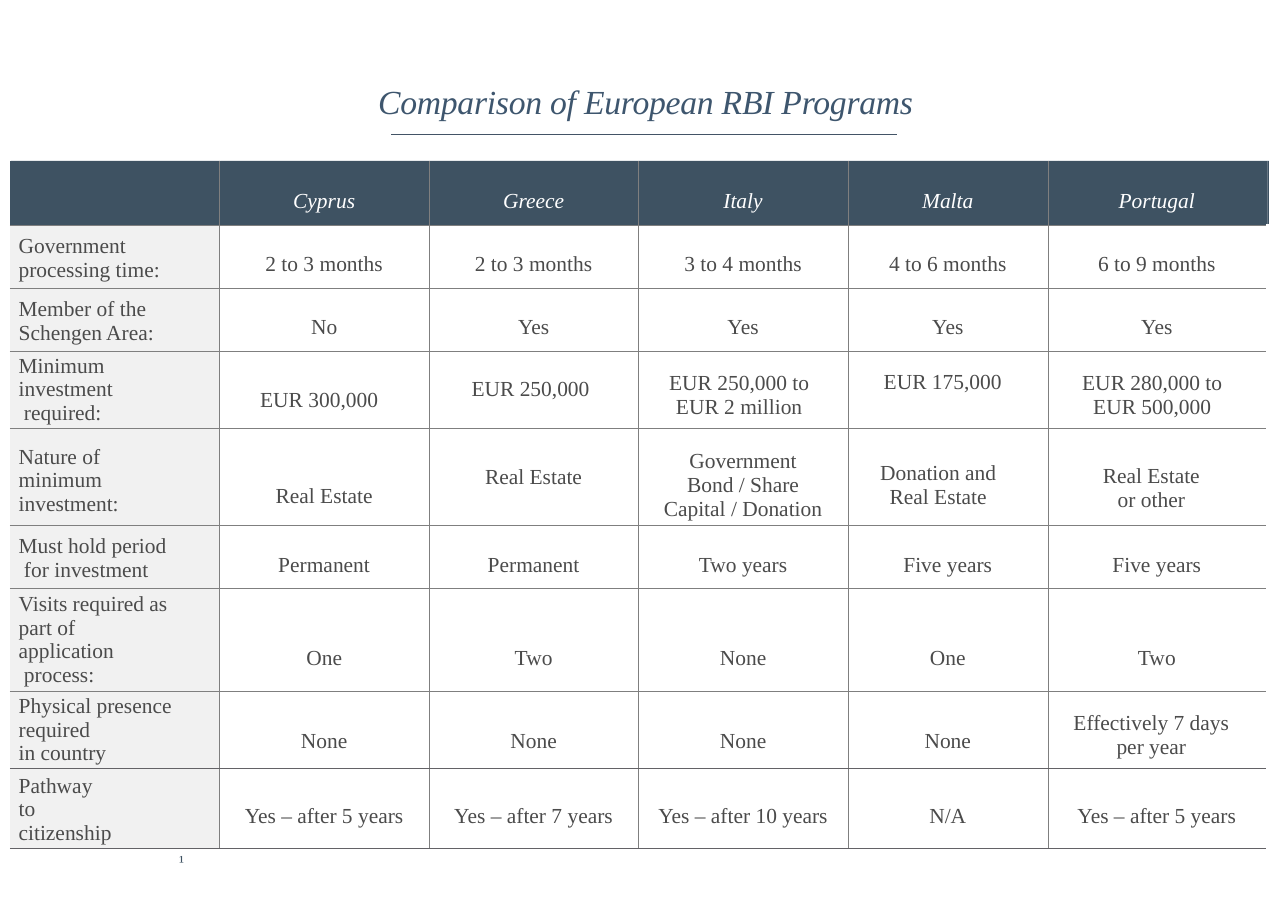
from dataclasses import dataclass

from lxml import etree
from pptx import Presentation
from pptx.dml.color import RGBColor
from pptx.enum.shapes import MSO_CONNECTOR, MSO_SHAPE
from pptx.enum.text import MSO_ANCHOR, PP_ALIGN
from pptx.oxml.ns import qn
from pptx.util import Cm, Pt

LEFT, CENTER = PP_ALIGN.LEFT, PP_ALIGN.CENTER
MIDDLE = MSO_ANCHOR.MIDDLE
STRAIGHT = MSO_CONNECTOR.STRAIGHT
RECT = MSO_SHAPE.RECTANGLE


@dataclass(frozen=True)
class Theme:
    font: str = "Times New Roman"
    title: str = "3E566E"
    rule: str = "435466"
    head: str = "3E5262"
    label: str = "F1F1F1"
    white: str = "FFFFFF"
    text: str = "4B4B4B"
    grid: str = "7F7F7F"
    edge: str = "636266"
    big: float = 22
    body: float = 14
    note: float = 11
    thin: float = 0.25
    thick: float = 0.5


@dataclass(frozen=True)
class Entry:
    """Cell text; drop and shift are extra margins in cm."""
    text: str
    drop: float = 0
    shift: float = 0


@dataclass(frozen=True)
class Row:
    height: float
    label: Entry
    cells: tuple[Entry, ...]


THEME = Theme()
COLS = (4.83, 4.83, 4.83, 4.83, 4.61, 5.03)
TABLE_X, TABLE_Y = 0.23, 3.71
PANEL_X, PANEL_W, PANEL_H, STRIP_W = 0.25, 4.83, 1.45, 0.03


def level(drop: float, *texts: str) -> tuple[Entry, ...]:
    """Entries that share one vertical offset."""
    return tuple(Entry(text, drop) for text in texts)


ROWS = (
    Row(1.47, Entry(""),
        level(0.4, "Cyprus", "Greece", "Italy", "Malta", "Portugal")),
    Row(1.46, Entry("Government\nprocessing time:", 0.08),
        level(0.38, "2 to 3 months", "2 to 3 months", "3 to 4 months",
              "4 to 6 months", "6 to 9 months")),
    Row(1.45, Entry("Member of the\nSchengen Area:", 0.08),
        level(0.38, "No", "Yes", "Yes", "Yes", "Yes")),
    Row(1.77, Entry("Minimum\ninvestment\n required:"),
        (Entry("EUR 300,000", 0.51, 0.23),
         Entry("EUR 250,000", 0, 0.14),
         Entry("EUR 250,000 to\nEUR 2 million", 0.25, 0.18),
         Entry("EUR 175,000", -0.33, 0.23),
         Entry("EUR 280,000 to\nEUR 500,000", 0.25, 0.21))),
    Row(2.24, Entry("Nature of\nminimum\ninvestment:", 0.18),
        (Entry("Real Estate", 0.9),
         Entry("Real Estate"),
         Entry("Government\nBond / Share\nCapital / Donation", 0.4),
         Entry("Donation and\nReal Estate", 0.4, 0.44),
         Entry("Real Estate\nor other", 0.53, 0.25))),
    Row(1.45, Entry("Must hold period\n for investment", 0.07),
        level(0.4, "Permanent", "Permanent", "Two years",
              "Five years", "Five years")),
    Row(2.34, Entry("Visits required as\npart of\napplication\n process:"),
        level(0.85, "One", "Two", "None", "One", "Two")),
    Row(1.77, Entry("Physical presence\nrequired\nin country"),
        level(0.55, "None", "None", "None", "None")
        + (Entry("Effectively 7 days\nper year", 0.25, 0.25),)),
    Row(1.83, Entry("Pathway\nto\ncitizenship", 0.06),
        level(0.38, "Yes – after 5 years", "Yes – after 7 years",
              "Yes – after 10 years", "N/A", "Yes – after 5 years")),
)


def color(code: str) -> RGBColor:
    return RGBColor.from_string(code)


def write(para, text: str, size: float, tint: str, slant: bool = False) -> None:
    """Add one run per line of text."""
    for i, line in enumerate(text.split("\n")):
        if i:
            para.add_line_break()
        run = para.add_run()
        run.text = line
        font = run.font
        font.name, font.size, font.italic = THEME.font, Pt(size), slant
        font.color.rgb = color(tint)


def add_text(slide, box: tuple[float, ...], text: str, size: float,
             tint: str, slant: bool = False):
    frame = slide.shapes.add_textbox(*map(Cm, box)).text_frame
    frame.word_wrap = True
    frame.margin_left = frame.margin_top = 0
    frame.margin_right = frame.margin_bottom = 0
    write(frame.paragraphs[0], text, size, tint, slant)
    return frame.paragraphs[0]


def add_panel(slide, left: float, width: float) -> None:
    panel = slide.shapes.add_shape(
        RECT, Cm(left), Cm(TABLE_Y), Cm(width), Cm(PANEL_H))
    panel.shadow.inherit = False
    panel.fill.solid()
    panel.fill.fore_color.rgb = color(THEME.head)
    panel.line.fill.background()


def add_edge(cell, side: str, tint: str | None, width: float) -> None:
    props = cell._tc.get_or_add_tcPr()
    line = etree.SubElement(props, qn(f"a:ln{side}"), w=str(Pt(width)))
    if tint is None:
        etree.SubElement(line, qn("a:noFill"))
        return
    fill = etree.SubElement(line, qn("a:solidFill"))
    etree.SubElement(fill, qn("a:srgbClr"), val=tint)


def add_edges(cell, r: int, c: int) -> None:
    """Inner grid lines, with stronger rules around the last row."""
    last = len(ROWS) - 1
    thin, thick = (THEME.grid, THEME.thin), (THEME.edge, THEME.thick)
    none = (None, THEME.thin)
    add_edge(cell, "L", *(thin if c else none))
    add_edge(cell, "R", *(thin if c < len(COLS) - 1 else none))
    add_edge(cell, "T", *(none if r == 0 else thick if r == last else thin))
    add_edge(cell, "B", *(thick if r >= last - 1 else thin))


def fill_cell(cell, entry: Entry, r: int, c: int) -> None:
    add_edges(cell, r, c)
    if r and c:
        cell.fill.background()
    else:
        cell.fill.solid()
        cell.fill.fore_color.rgb = color(THEME.label if r else THEME.head)
    cell.vertical_anchor = MIDDLE
    cell.margin_left = Cm(0 if c else 0.2)
    cell.margin_right = Cm(entry.shift)
    cell.margin_top = Cm(max(entry.drop, 0))
    cell.margin_bottom = Cm(max(-entry.drop, 0))
    para = cell.text_frame.paragraphs[0]
    para.alignment = CENTER if c else LEFT
    if entry.text:
        tint = THEME.text if r else THEME.white
        write(para, entry.text, THEME.body, tint, r == 0)


def add_grid(slide) -> None:
    high = sum(row.height for row in ROWS)
    table = slide.shapes.add_table(
        len(ROWS), len(COLS), Cm(TABLE_X), Cm(TABLE_Y),
        Cm(sum(COLS)), Cm(high)).table
    table.first_row = table.horz_banding = False
    for c, width in enumerate(COLS):
        table.columns[c].width = Cm(width)
    for r, row in enumerate(ROWS):
        table.rows[r].height = Cm(row.height)
        for c, entry in enumerate((row.label, *row.cells)):
            fill_cell(table.cell(r, c), entry, r, c)


def main() -> None:
    deck = Presentation()
    deck.slide_width, deck.slide_height = Cm(29.7), Cm(21)
    slide = deck.slides.add_slide(deck.slide_layouts[6])

    # Title and its rule
    title = add_text(slide, (8.72, 1.86, 13.36, 0.94),
                     "Comparison of European RBI Programs",
                     THEME.big, THEME.title, True)
    title.runs[0]._r.get_or_add_rPr().set("spc", "-15")
    rule = slide.shapes.add_connector(
        STRAIGHT, Cm(9.02), Cm(3.1), Cm(20.69), Cm(3.1))
    rule.line.color.rgb = color(THEME.rule)
    rule.line.width = Pt(0.5)
    etree.SubElement(rule._element.spPr, qn("a:effectLst"))

    # Footnote mark
    add_text(slide, (4.13, 19.6, 22.68, 0.46), "¹", THEME.note, THEME.head)

    # Header band and its end strip
    add_panel(slide, PANEL_X + len(COLS) * PANEL_W, STRIP_W)
    for i in range(len(COLS)):
        add_panel(slide, PANEL_X + i * PANEL_W, PANEL_W)

    # Comparison table
    add_grid(slide)
    deck.save("out.pptx")


if __name__ == "__main__":
    main()
